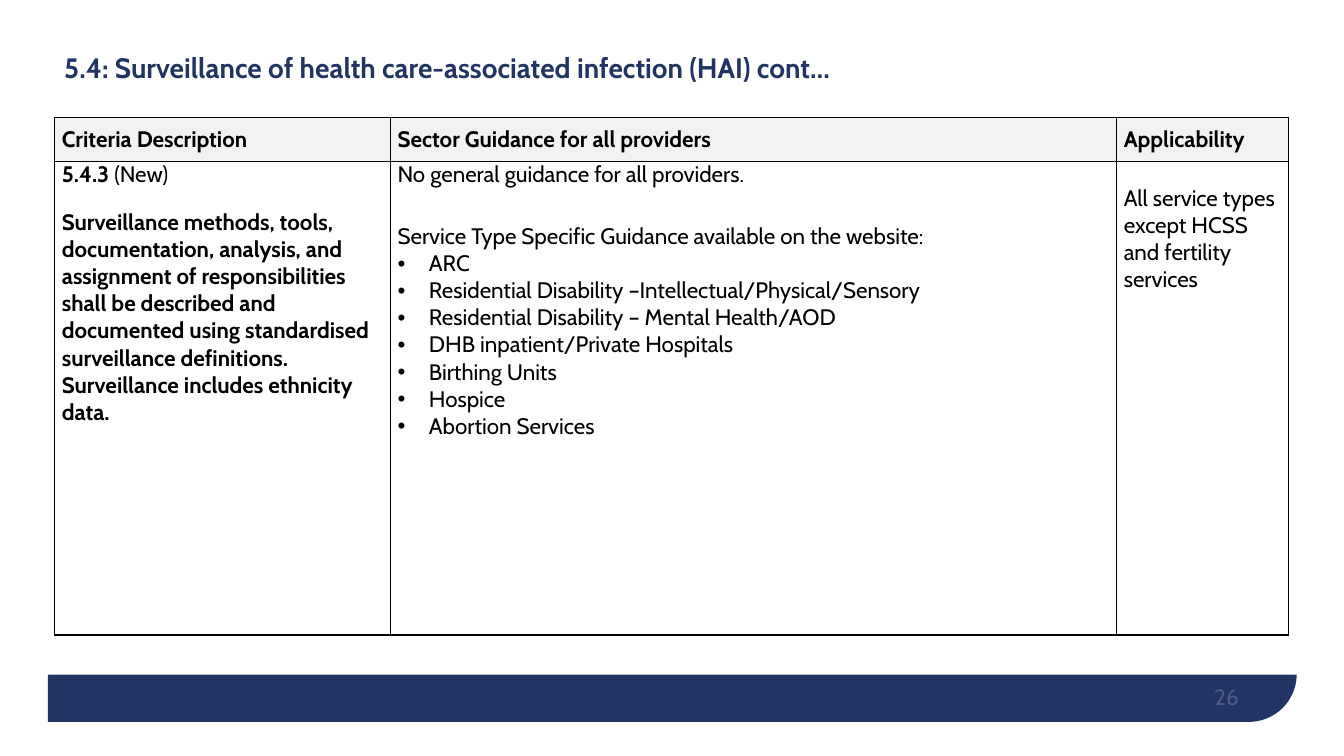
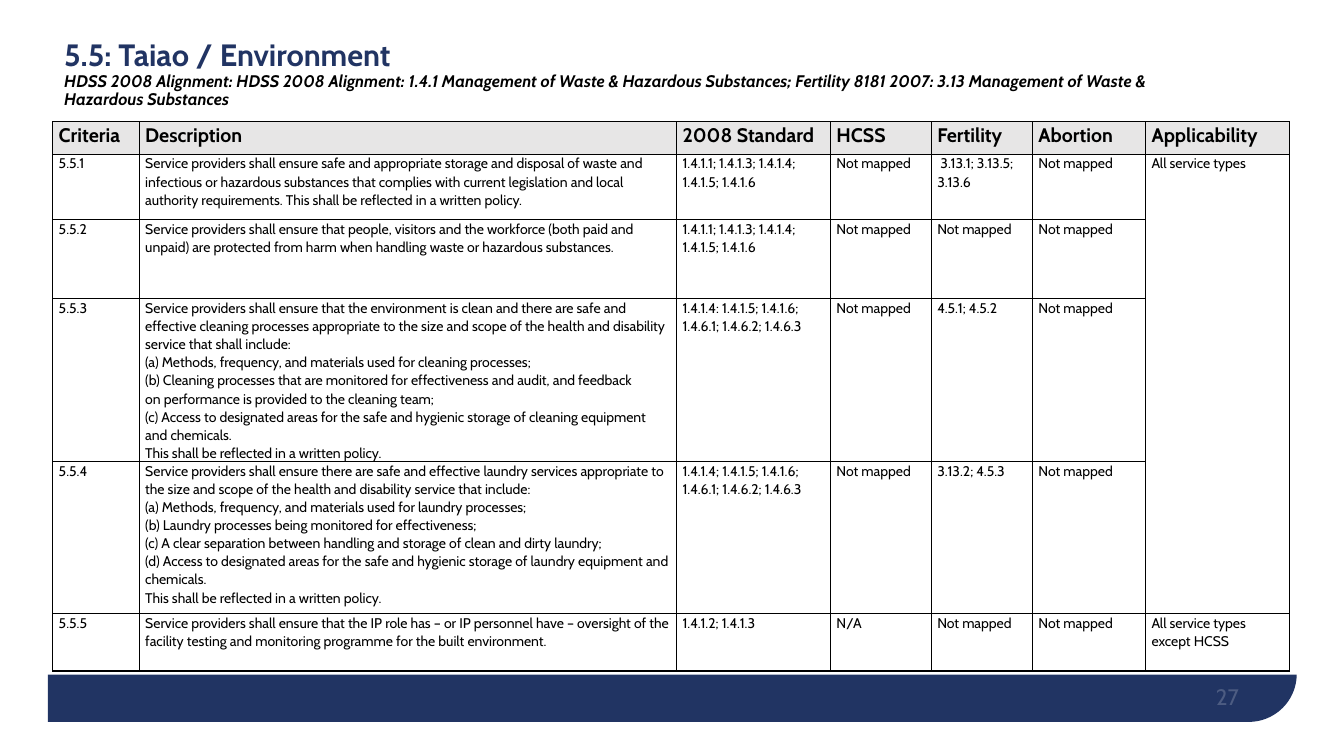
"""Build two slides on infection surveillance and environment criteria."""
from lxml.etree import SubElement
from pptx import Presentation
from pptx.dml.color import RGBColor
from pptx.enum.shapes import MSO_SHAPE as Preset
from pptx.enum.text import MSO_ANCHOR as Anchor, PP_ALIGN as Align
from pptx.oxml.ns import qn
from pptx.util import Cm, Pt

NAVY = RGBColor(0x21, 0x34, 0x63)
BLACK = RGBColor(0, 0, 0)
WHITE = RGBColor(0xFF, 0xFF, 0xFF)
PALE_GREY = RGBColor(0xF2, 0xF2, 0xF2)
WARM_GREY = RGBColor(0xE7, 0xE6, 0xE6)


def style(paragraph, size, color=BLACK, bold=False, italic=False, spacing=None):
    if spacing:
        paragraph.line_spacing = spacing
    font = paragraph.font
    font.name, font.size, font.bold, font.italic = "Cabin", Pt(size), bold, italic
    font.color.rgb = color


def add_grid(slide, left, top, widths, heights, margin, header_fill):
    grid = slide.shapes.add_table(len(heights), len(widths), Cm(left), Cm(top),
                                  Cm(sum(widths)), Cm(sum(heights))).table
    grid.first_row = grid.horz_banding = False
    for column, width in zip(grid.columns, widths):
        column.width = Cm(width)
    for index, (row, height) in enumerate(zip(grid.rows, heights)):
        row.height = Cm(height)
        for cell in row.cells:
            cell.margin_left = cell.margin_right = Cm(margin)
            cell.margin_top = cell.margin_bottom = 0
            for side in ("a:lnL", "a:lnR", "a:lnT", "a:lnB"):
                border = SubElement(cell._tc.get_or_add_tcPr(), qn(side), w=str(Pt(1)))
                SubElement(SubElement(border, qn("a:solidFill")), qn("a:srgbClr"), val=str(BLACK))
            if index == 0:
                cell.fill.solid()
                cell.fill.fore_color.rgb = header_fill
            else:
                cell.fill.background()
    return grid


deck = Presentation()
deck.slide_width, deck.slide_height = Cm(33.87), Cm(19.05)

headings = [
    (26, (1.37, 0.55, 27.69, 2.41), [
        ("5.4: Surveillance of health care-associated infection (HAI) cont…", 20, NAVY, False)]),
    (27, (1.37, 0.4, 27.91, 2.97), [
        ("5.5: Taiao / Environment", 22, NAVY, False),
        ("HDSS 2008 Alignment: HDSS 2008 Alignment: 1.4.1 Management of Waste & Hazardous "
         "Substances; Fertility 8181 2007: 3.13 Management of Waste & Hazardous Substances",
         12, BLACK, True)]),
]
slides = []
for page, place, lines in headings:
    slide = deck.slides.add_slide(deck.slide_layouts[6])
    slides.append(slide)

    band = slide.shapes.add_shape(Preset.ROUND_1_RECTANGLE,
                                  Cm(1.21), Cm(0.95), Cm(31.47), Cm(17.24))
    band.adjustments[0] = 0.07
    band.rotation = 180
    band._element.spPr.xfrm.set("flipH", "1")
    page_area = slide.shapes.add_shape(Preset.RECTANGLE, 0, 0, deck.slide_width, Cm(17))
    for panel, color in [(band, NAVY), (page_area, WHITE)]:
        panel.shadow.inherit = False
        panel.fill.solid()
        panel.fill.fore_color.rgb = color
        panel.line.fill.background()

    page_frame = slide.shapes.add_textbox(Cm(23.6), Cm(16.87), Cm(7.62), Cm(1.02)).text_frame
    page_frame.margin_left = page_frame.margin_right = 0
    page_frame.margin_top = page_frame.margin_bottom = 0
    page_frame.word_wrap = True
    page_frame.vertical_anchor = Anchor.BOTTOM
    page_line = page_frame.paragraphs[0]
    page_line.text = str(page)
    page_line.alignment = Align.RIGHT
    style(page_line, 16, WHITE)
    for tint in page_line._p.iter(qn("a:srgbClr")):
        SubElement(tint, qn("a:alpha"), val="20000")

    heading = slide.shapes.add_textbox(*map(Cm, place)).text_frame
    heading.word_wrap = True
    heading.vertical_anchor = Anchor.MIDDLE
    heading.text = "\n".join(line[0] for line in lines)
    for paragraph, (_, size, color, italic) in zip(heading.paragraphs, lines):
        style(paragraph, size, color, True, italic, 0.9)

surveillance, environment = slides

guidance_grid = add_grid(surveillance, 1.38, 2.97, [8.46, 18.3, 4.33], [1.09, 11.94],
                         0.18, PALE_GREY)
for cell, label in zip(guidance_grid.rows[0].cells, [
        "Criteria Description", "Sector Guidance for all providers", "Applicability"]):
    cell.text = label
    cell.vertical_anchor = Anchor.MIDDLE
    style(cell.text_frame.paragraphs[0], 16, bold=True)

criterion, guidance, applicability = guidance_grid.rows[1].cells
code = criterion.text_frame.paragraphs[0]
for text, bold in [("5.4.3 ", True), ("(New)", False)]:
    run = code.add_run()
    run.text = text
    run.font.bold = bold
style(code, 16, bold=None)
code.space_after = Pt(15)
requirement = criterion.text_frame.add_paragraph()
requirement.text = (
    "Surveillance methods, tools, documentation, analysis, and assignment of responsibilities "
    "shall be described and documented using standardised surveillance definitions. "
    "Surveillance includes ethnicity data.")
style(requirement, 16, bold=True)

service_types = [
    "ARC",
    "Residential Disability –Intellectual/Physical/Sensory",
    "Residential Disability – Mental Health/AOD",
    "DHB inpatient/Private Hospitals",
    "Birthing Units",
    "Hospice",
    "Abortion Services",
]
guidance.text = "\n".join(["No general guidance for all providers.",
                           "Service Type Specific Guidance available on the website:",
                           *service_types])
for index, paragraph in enumerate(guidance.text_frame.paragraphs):
    if index > 1:
        properties = paragraph._p.get_or_add_pPr()
        properties.set("marL", str(Cm(0.79)))
        properties.set("indent", str(-Cm(0.79)))
        SubElement(properties, qn("a:buFont"), typeface="Arial")
        SubElement(properties, qn("a:buChar"), char="•")
    style(paragraph, 16)
guidance.text_frame.paragraphs[0].space_after = Pt(25)

applicability.text = "All service types except HCSS and fertility services"
applicability.margin_top = Cm(0.6)
style(applicability.text_frame.paragraphs[0], 16)

criteria = [
    ["Criteria", "Description", "2008 Standard", "HCSS", "Fertility", "Abortion", "Applicability"],
    ["5.5.1",
     "Service providers shall ensure safe and appropriate storage and disposal of waste and "
     "infectious or hazardous substances that complies with current legislation and local "
     "authority requirements. This shall be reflected in a written policy.",
     "1.4.1.1; 1.4.1.3; 1.4.1.4; 1.4.1.5; 1.4.1.6", "Not mapped", " 3.13.1; 3.13.5; 3.13.6",
     "Not mapped", "All service types"],
    ["5.5.2",
     "Service providers shall ensure that people, visitors and the workforce (both paid and\n"
     "unpaid) are protected from harm when handling waste or hazardous substances.",
     "1.4.1.1; 1.4.1.3; 1.4.1.4; 1.4.1.5; 1.4.1.6", "Not mapped", "Not mapped", "Not mapped"],
    ["5.5.3",
     "Service providers shall ensure that the environment is clean and there are safe and "
     "effective cleaning processes appropriate to the size and scope of the health and "
     "disability service that shall include:\n"
     "(a) Methods, frequency, and materials used for cleaning processes;\n"
     "(b) Cleaning processes that are monitored for effectiveness and audit, and feedback\n"
     "on performance is provided to the cleaning team;\n"
     "(c) Access to designated areas for the safe and hygienic storage of cleaning equipment "
     "and chemicals.\n"
     "This shall be reflected in a written policy.",
     "1.4.1.4: 1.4.1.5; 1.4.1.6; 1.4.6.1; 1.4.6.2; 1.4.6.3", "Not mapped", "4.5.1; 4.5.2",
     "Not mapped"],
    ["5.5.4",
     "Service providers shall ensure there are safe and effective laundry services appropriate "
     "to the size and scope of the health and disability service that include:\n"
     "(a) Methods, frequency, and materials used for laundry processes;\n"
     "(b) Laundry processes being monitored for effectiveness;\n"
     "(c) A clear separation between handling and storage of clean and dirty laundry;\n"
     "(d) Access to designated areas for the safe and hygienic storage of laundry equipment "
     "and chemicals.\n"
     "This shall be reflected in a written policy.",
     "1.4.1.4; 1.4.1.5; 1.4.1.6; 1.4.6.1; 1.4.6.2; 1.4.6.3", "Not mapped", "3.13.2; 4.5.3",
     "Not mapped"],
    ["5.5.5",
     "Service providers shall ensure that the IP role has – or IP personnel have – oversight of "
     "the facility testing and monitoring programme for the built environment.",
     "1.4.1.2; 1.4.1.3", "N/A", "Not mapped", "Not mapped", "All service types except HCSS"],
]
criteria_grid = add_grid(environment, 1.33, 3.07, [2.18, 13.54, 3.88, 2.54, 2.55, 2.85, 3.62],
                         [0.82, 1.65, 1.99, 4.1, 3.84, 1.44], 0.15, WARM_GREY)
criteria_grid.cell(1, 6).merge(criteria_grid.cell(4, 6))
for index, (row, texts) in enumerate(zip(criteria_grid.rows, criteria)):
    for cell, text in zip(row.cells, texts):
        cell.text = text
        for paragraph in cell.text_frame.paragraphs:
            style(paragraph, 14 if index == 0 else 10, bold=index == 0, spacing=1.07)

deck.save("out.pptx")
